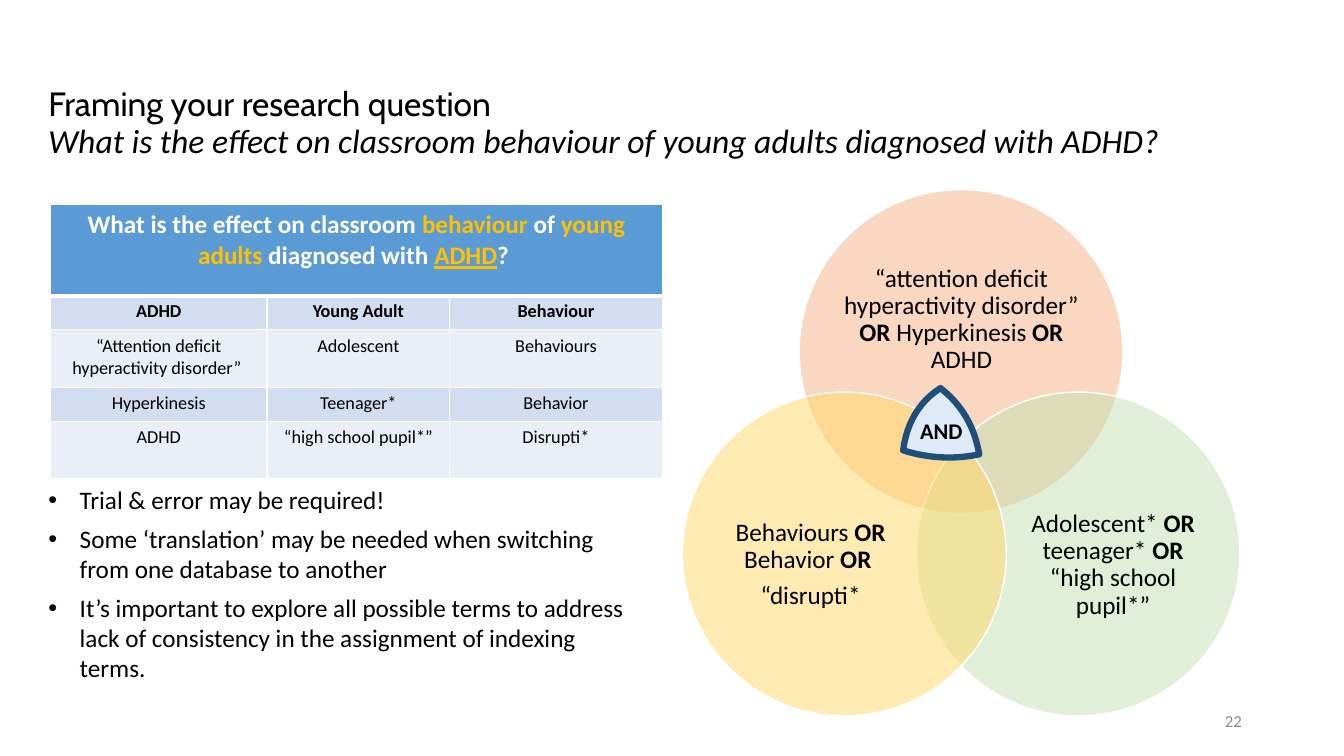
"""Builds the slide on framing a research question about ADHD."""
import pptx
import pptx.dml.color
import pptx.enum.shapes
import pptx.enum.text
import pptx.oxml
import pptx.oxml.ns
import pptx.util
from pptx.util import Cm, Pt

BLACK, WHITE, GOLD, NAVY, GREY = "000000", "FFFFFF", "FFC000", "1F4E79", "8C8C8C"
HEADER_BLUE, BAND_DARK, BAND_LIGHT, PALE_BLUE = "5B9BD5", "D2DEEF", "EAEFF7", "DEEBF7"

TITLE = [[
    ("Framing your research question ", "", BLACK, "Cabin"),
    "\n",
    ("What is the effect on classroom behaviour of young adults diagnosed with ADHD?", "i"),
]]
QUESTION = [[
    ("What is the effect on classroom ", "b"), ("behaviour", "b", GOLD),
    (" of ", "b"), ("young adults ", "b", GOLD), ("diagnosed with ", "b"),
    ("ADHD", "bu", GOLD), ("? ", "b"),
]]
TERMS = [
    ("ADHD", "Young Adult", "Behaviour"),
    ("“Attention deficit hyperactivity disorder” ", "Adolescent", "Behaviours"),
    ("Hyperkinesis", "Teenager*", "Behavior"),
    ("ADHD", "“high school pupil*”", "Disrupti*"),
]
COLUMN_WIDTHS = (5.46, 4.6, 5.36)
ROW_HEIGHTS = (2.29, 0.86, 1.45, 0.86, 1.45)
ADVICE = [
    ["Trial & error may be required!"],
    ["Some ‘translation’ may be needed when switching from one database to another"],
    ["It’s important to explore all possible terms to address lack of consistency "
     "in the assignment of indexing terms."],
]
OR = ("OR ", "b")
CIRCLE_SIZE = 8.16
CIRCLES = [
    ((20.14, 4.78), "F4B183", (21.23, 6.22, 6, 3.68),
     [["“attention deficit hyperactivity disorder” ", OR, "Hyperkinesis", (" OR ", "b"), "ADHD"]]),
    ((23.09, 9.88), "C5E0B4", (25.6, 11.99, 4.9, 4.5),
     [["Adolescent* ", OR, "teenager* ", OR, "“high school pupil*”"]]),
    ((17.2, 9.88), "FFD966", (17.98, 11.99, 4.9, 4.5),
     [["Behaviours ", OR, "Behavior ", OR], ["“disrupti*"]]),
]
TRIANGLE_SIDES = [
    ((23.7, 9.78), (24.5, 10.4), (24.68, 11.45)),
    ((24.68, 11.45), (23.72, 11.65), (22.76, 11.35)),
    ((22.76, 11.35), (22.9, 10.3), (23.7, 9.78)),
]
CURVE_STEPS = 12


def colour(target, code):
    target.rgb = pptx.dml.color.RGBColor.from_string(code)


def fill(target, code):
    target.fill.solid()
    colour(target.fill.fore_color, code)


def write(frame, paragraphs, size, align="LEFT", ink=BLACK, spacing=None, before=0, after=0):
    for index, pieces in enumerate(paragraphs):
        paragraph = frame.paragraphs[0] if index == 0 else frame.add_paragraph()
        paragraph.alignment = getattr(pptx.enum.text.PP_ALIGN, align)
        paragraph.space_before, paragraph.space_after = Pt(before), Pt(after)
        paragraph.line_spacing = spacing
        for piece in pieces:
            if piece == "\n":
                paragraph.add_line_break()
                continue
            defaults = ("", "", ink, "Calibri")
            given = (piece,) if isinstance(piece, str) else piece
            text, flags, code, face = given + defaults[len(given):]
            run = paragraph.add_run()
            run.text = text
            run.font.name, run.font.size = face, Pt(size)
            run.font.bold, run.font.italic = "b" in flags, "i" in flags
            run.font.underline = "u" in flags
            colour(run.font.color, code)


def add_text(slide, box, paragraphs, size, anchor="TOP", inset=True, **style):
    frame = slide.shapes.add_textbox(*map(Cm, box)).text_frame
    frame.word_wrap = True
    frame.vertical_anchor = getattr(pptx.enum.text.MSO_ANCHOR, anchor)
    if not inset:
        frame.margin_left = frame.margin_right = frame.margin_top = frame.margin_bottom = 0
    write(frame, paragraphs, size, **style)
    return frame


def outline(shape, code, width):
    shape.shadow.inherit = False
    shape.line.width = Pt(width)
    colour(shape.line.color, code)


def element(xml):
    return pptx.oxml.parse_xml(xml.replace(">", f" {pptx.oxml.ns.nsdecls('a')}>", 1))


def add_bullets(frame):
    for paragraph in frame.paragraphs:
        properties = paragraph._p.get_or_add_pPr()
        properties.set("marL", str(Cm(0.79)))
        properties.set("indent", str(-Cm(0.79)))
        properties.append(element('<a:buFont typeface="Arial"></a:buFont>'))
        properties.append(element('<a:buChar char="•"></a:buChar>'))


def style_cell(cell, code, top, bottom):
    for side, width in (("L", 1), ("R", 1), ("T", top), ("B", bottom)):
        cell._tc.get_or_add_tcPr().append(element(
            f'<a:ln{side} w="{Pt(width)}"><a:solidFill><a:srgbClr val="{WHITE}"/>'
            f'</a:solidFill></a:ln{side}>'))
    fill(cell, code)


def add_terms_table(slide):
    box = (1.27, 5.16, sum(COLUMN_WIDTHS), sum(ROW_HEIGHTS))
    table = slide.shapes.add_table(
        len(ROW_HEIGHTS), len(COLUMN_WIDTHS), *map(Cm, box)).table
    table.first_row = table.horz_banding = False
    for column, width in zip(table.columns, COLUMN_WIDTHS):
        column.width = Cm(width)
    for row, height in zip(table.rows, ROW_HEIGHTS):
        row.height = Cm(height)
    table.cell(0, 0).merge(table.cell(0, len(COLUMN_WIDTHS) - 1))
    for column in range(len(COLUMN_WIDTHS)):
        style_cell(table.cell(0, column), HEADER_BLUE, 1, 3)
    write(table.cell(0, 0).text_frame, QUESTION, 18, "CENTER", WHITE)
    for row, terms in enumerate(TERMS, 1):
        for column, term in enumerate(terms):
            cell = table.cell(row, column)
            style_cell(cell, BAND_DARK if row % 2 else BAND_LIGHT, 3 if row == 1 else 1, 1)
            write(cell.text_frame, [[(term, "b" if row == 1 else "")]], 13, "CENTER")


def add_circle(slide, corner, code, text_box, terms):
    circle = slide.shapes.add_shape(
        pptx.enum.shapes.MSO_SHAPE.OVAL, *map(Cm, corner + (CIRCLE_SIZE, CIRCLE_SIZE)))
    fill(circle, code)
    tint = circle.fill._xPr.find(".//" + pptx.oxml.ns.qn("a:srgbClr"))
    tint.append(element('<a:alpha val="50000"></a:alpha>'))
    outline(circle, WHITE, 1)
    add_text(slide, text_box, terms, 18, "MIDDLE", inset=False,
             align="CENTER", spacing=0.9, after=6.3)


def add_triangle(slide):
    points = []
    for start, bend, end in TRIANGLE_SIDES:
        for step in range(CURVE_STEPS):
            t = step / CURVE_STEPS
            points.append(tuple(
                Cm((1 - t) ** 2 * a + 2 * t * (1 - t) * b + t ** 2 * c)
                for a, b, c in zip(start, bend, end)))
    builder = slide.shapes.build_freeform(*points[0])
    builder.add_line_segments(points[1:], close=True)
    triangle = builder.convert_to_shape()
    fill(triangle, PALE_BLUE)
    outline(triangle, NAVY, 4.5)


def main():
    deck = pptx.Presentation()
    deck.slide_width, deck.slide_height = Cm(33.87), Cm(19.05)
    slide = deck.slides.add_slide(deck.slide_layouts[6])
    add_text(slide, (0.97, 1.63, 31.93, 3), TITLE, 24, "MIDDLE", spacing=0.9)
    add_bullets(add_text(slide, (0.97, 12.09, 15.24, 5.31), ADVICE, 18, before=6))
    add_terms_table(slide)
    for circle in CIRCLES:
        add_circle(slide, *circle)
    add_triangle(slide)
    add_text(slide, (22.94, 10.39, 1.68, 0.97), [[("AND", "b")]], 16).word_wrap = False
    add_text(slide, (23.93, 17.65, 7.62, 1.02), [["22"]], 12, "MIDDLE", align="RIGHT", ink=GREY)
    deck.save("out.pptx")


if __name__ == "__main__":
    main()
